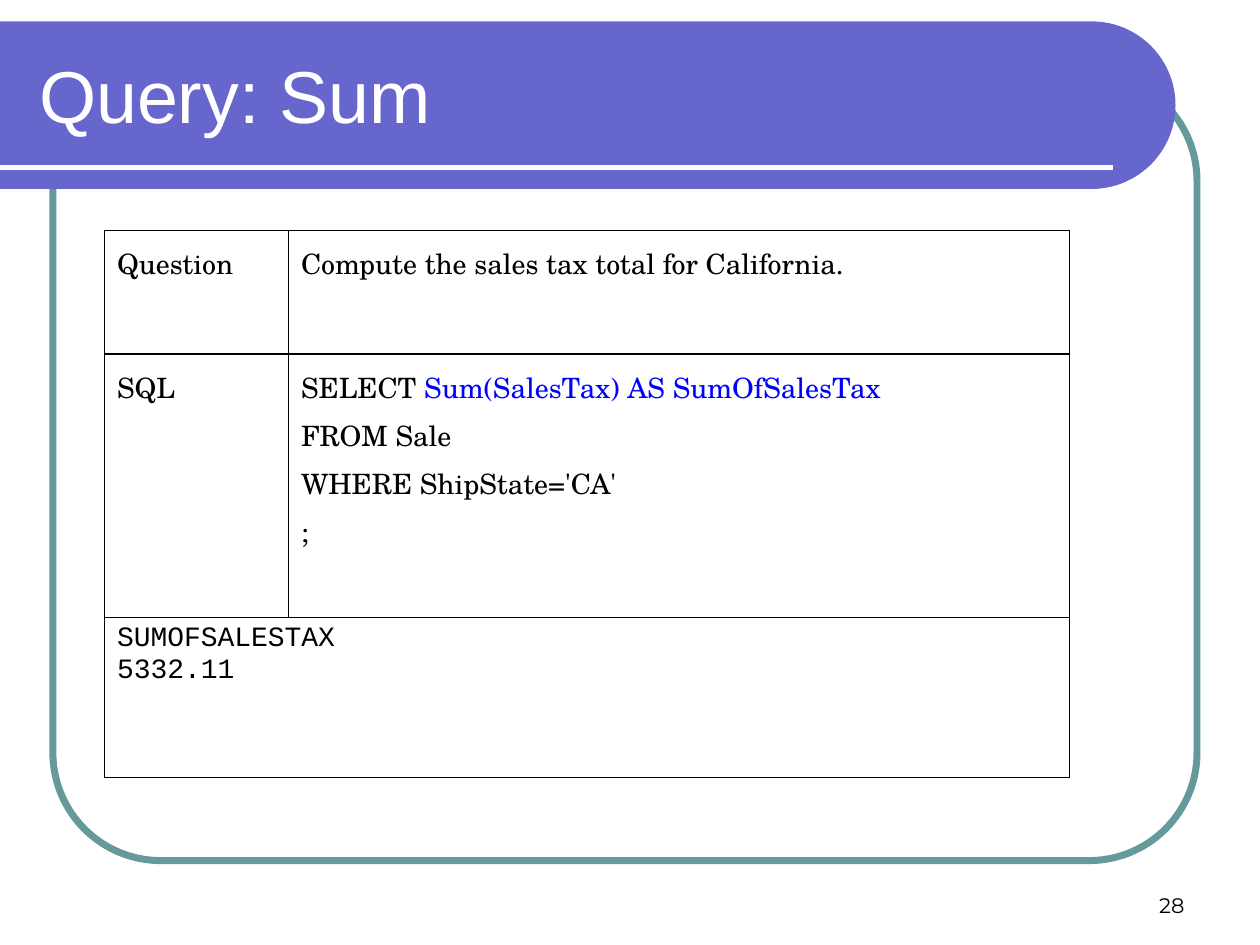
from math import cos, pi, sin

from pptx import Presentation
from pptx.dml.color import RGBColor
from pptx.enum.shapes import MSO_CONNECTOR, MSO_SHAPE
from pptx.enum.text import MSO_ANCHOR, MSO_AUTO_SIZE, PP_ALIGN
from pptx.oxml import parse_xml
from pptx.oxml.ns import nsdecls
from pptx.util import Inches, Pt

SERIF = {"name": "TeX Gyre Schola", "size": Pt(16)}
MONO = {"name": "Courier New", "size": Pt(16)}
BLACK, BLUE, WHITE = "000000", "0000FF", "FFFFFF"
BAND, RING = "6666CC", "669999"


def color(text):
    return RGBColor.from_string(text)


def assign(item, values):
    for name, value in values.items():
        setattr(item, name, value)


def place(shape, box):
    assign(shape, dict(zip(("left", "top", "width", "height"), map(Inches, box))))


def write(para, runs, style):
    for text, tint in runs:
        run = para.add_run()
        run.text = text
        assign(run.font, style)
        run.font.color.rgb = color(tint)


def add_frame(slide, box):
    frame = slide.shapes.add_shape(MSO_SHAPE.ROUNDED_RECTANGLE, *map(Inches, box))
    frame.adjustments[0] = 0.137
    frame.shadow.inherit = False
    frame.fill.background()
    frame.line.color.rgb = color(RING)
    frame.line.width = Pt(4)


def add_band(slide, box):
    left, top, width, height = box
    radius = height / 2
    hub = left + width - radius
    steps = 48
    angles = [pi * step / steps - pi / 2 for step in range(steps + 1)]
    curve = [
        (Inches(hub + radius * cos(angle)), Inches(top + radius + radius * sin(angle)))
        for angle in angles
    ]
    builder = slide.shapes.build_freeform(Inches(left), Inches(top))
    builder.add_line_segments(curve + [(Inches(left), Inches(top + height))], close=True)
    band = builder.convert_to_shape()
    band.shadow.inherit = False
    band.fill.solid()
    band.fill.fore_color.rgb = color(BAND)
    band.line.fill.background()

    level = Inches(top + height - 0.17)
    rule = slide.shapes.add_connector(
        MSO_CONNECTOR.STRAIGHT, Inches(left), level, Inches(left + width - 0.5), level
    )
    rule.line.color.rgb = color(WHITE)
    rule.line.width = Pt(3)
    rule.element.spPr.append(parse_xml(f"<a:effectLst {nsdecls('a')}/>"))


def add_title(slide, box, text):
    title = slide.shapes.title
    title.element.getparent().append(title.element)
    place(title, box)
    frame = title.text_frame
    assign(frame, {
        "auto_size": MSO_AUTO_SIZE.NONE,
        "vertical_anchor": MSO_ANCHOR.MIDDLE,
        "word_wrap": True,
    })
    para = frame.paragraphs[0]
    para.alignment = PP_ALIGN.LEFT
    write(para, [(text, WHITE)], {"name": "Arial", "size": Pt(42)})


def add_number(slide, box, text):
    frame = slide.shapes.add_textbox(*map(Inches, box)).text_frame
    assign(frame, {"word_wrap": True, "vertical_anchor": MSO_ANCHOR.BOTTOM})
    para = frame.paragraphs[0]
    para.alignment = PP_ALIGN.RIGHT
    write(para, [(text, BLACK)], {"name": "Montserrat", "size": Pt(12)})


def border(cell):
    props = cell._tc.get_or_add_tcPr()
    for spot, side in enumerate(("lnL", "lnR", "lnT", "lnB")):
        props.insert(spot, parse_xml(
            f'<a:{side} {nsdecls("a")} w="{Pt(1)}"><a:solidFill>'
            f'<a:srgbClr val="{BLACK}"/></a:solidFill></a:{side}>'
        ))


def fill_cell(cell, lines, style, gap, inset):
    cell.margin_top = Inches(inset)
    frame = cell.text_frame
    for spot, runs in enumerate(lines):
        para = frame.add_paragraph() if spot else frame.paragraphs[0]
        props = para._p.get_or_add_pPr()
        props.set("marL", str(Inches(0.38)))
        props.set("indent", str(-Inches(0.38)))
        if spot:
            para.space_before = Pt(gap)
        write(para, runs, style)


def add_query(slide, box, rows, result):
    widths, heights = (1.46, 6.2), (0.98, 2.09, 1.27)
    table = slide.shapes.add_table(3, 2, *map(Inches, box)).table
    assign(table, {"first_row": False, "horz_banding": False})
    for column, width in zip(table.columns, widths):
        column.width = Inches(width)
    for row, height in zip(table.rows, heights):
        row.height = Inches(height)
    for cell in table.iter_cells():
        cell.fill.background()
        border(cell)
    for row, (label, lines) in enumerate(rows):
        fill_cell(table.cell(row, 0), [[(label, BLACK)]], SERIF, 4, 0.1)
        fill_cell(table.cell(row, 1), lines, SERIF, 4, 0.1)
    last = table.cell(2, 0)
    last.merge(table.cell(2, 1))
    fill_cell(last, [[(line, BLACK)] for line in result], MONO, 0, 0.05)


def main():
    deck = Presentation()
    assign(deck, {"slide_width": Inches(10), "slide_height": Inches(7.5)})
    slide = deck.slides.add_slide(deck.slide_layouts[5])
    add_frame(slide, (0.42, 0.58, 9.08, 6.25))
    add_band(slide, (0, 0.17, 9.33, 1.33))
    add_number(slide, (7.17, 6.83, 2.33, 0.5), "28")
    add_title(slide, (0.21, 0.25, 8.77, 1), "Query: Sum")
    rows = [
        ("Question", [[("Compute the sales tax total for California.", BLACK)]]),
        ("SQL", [
            [("SELECT ", BLACK), ("Sum(SalesTax) AS SumOfSalesTax", BLUE)],
            [("FROM Sale", BLACK)],
            [("WHERE ShipState='CA'", BLACK)],
            [(";", BLACK)],
        ]),
    ]
    add_query(slide, (0.83, 1.83, 7.67, 4.33), rows, ("SUMOFSALESTAX", "5332.11"))
    deck.save("out.pptx")


if __name__ == "__main__":
    main()
